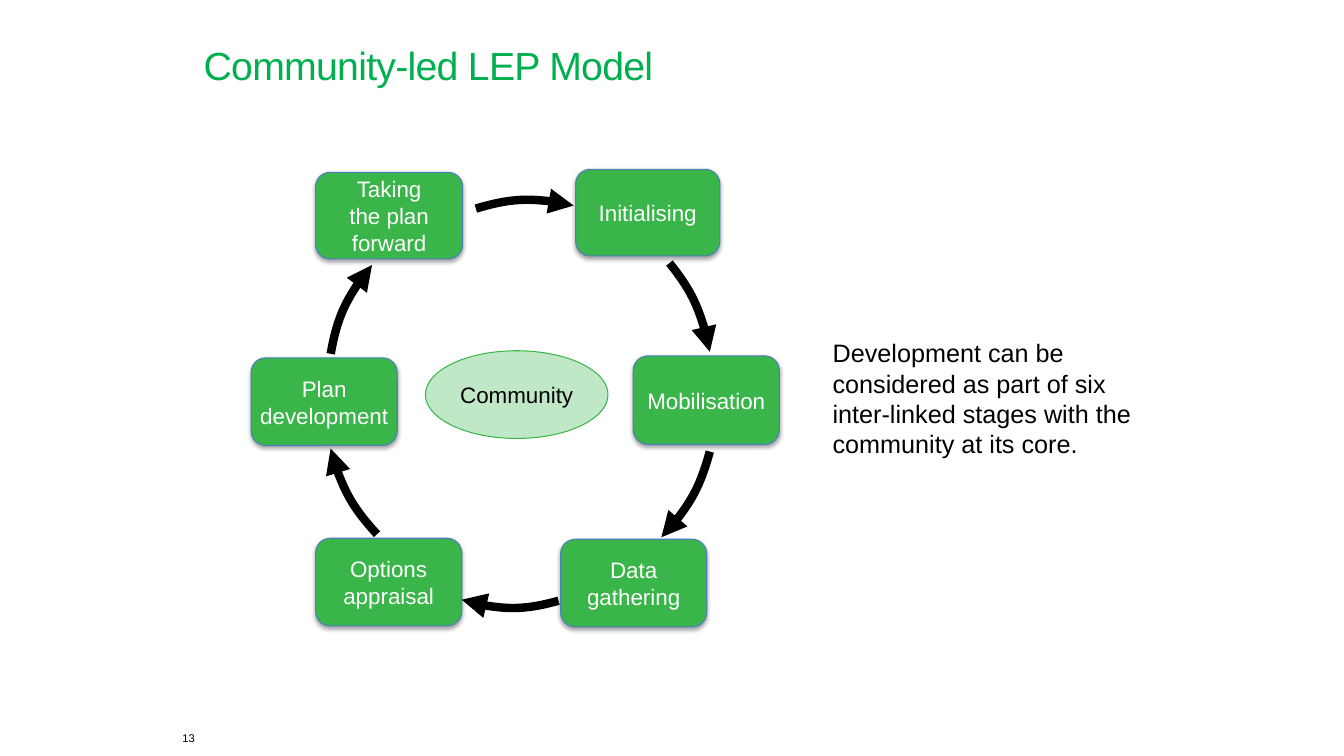
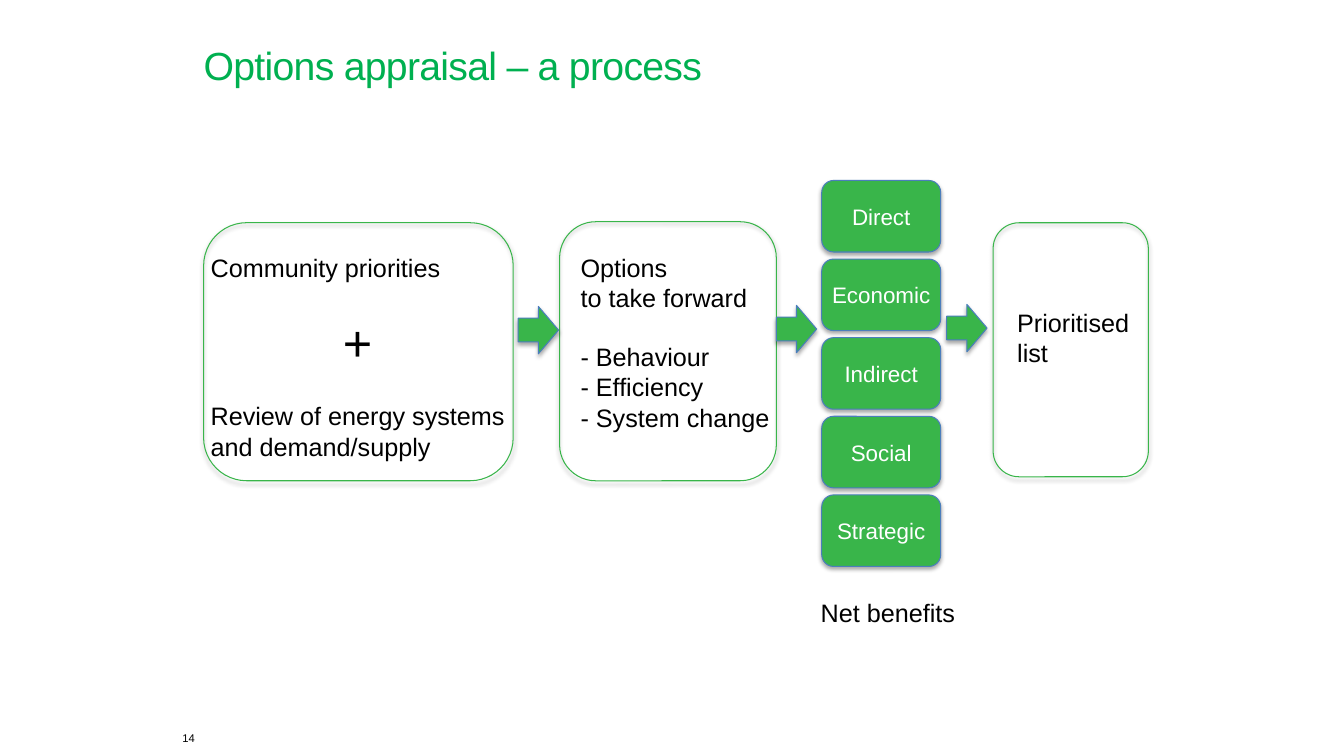
"""Build two slides on community-led local energy planning."""
from dataclasses import dataclass

from lxml import etree
from pptx import Presentation
from pptx.dml.color import RGBColor
from pptx.enum.shapes import MSO_SHAPE
from pptx.enum.text import MSO_ANCHOR, MSO_AUTO_SIZE, PP_ALIGN
from pptx.oxml.ns import qn
from pptx.shapes.autoshape import Shape
from pptx.slide import Slide
from pptx.text.text import TextFrame
from pptx.util import Inches, Pt

ROUNDED = MSO_SHAPE.ROUNDED_RECTANGLE
RIGHT_ARROW = MSO_SHAPE.RIGHT_ARROW
OVAL = MSO_SHAPE.OVAL
LEFT, CENTER = PP_ALIGN.LEFT, PP_ALIGN.CENTER
TOP, MIDDLE = MSO_ANCHOR.TOP, MSO_ANCHOR.MIDDLE
NO_AUTOFIT = MSO_AUTO_SIZE.NONE

FONT = "Arial"
GREEN, TITLE_GREEN, BLUE = "39B54A", "00B050", "4B7EBC"
BLACK, WHITE = "000000", "FFFFFF"
BLANK_LINE = 20.7
TITLE_ONLY_LAYOUT = 5


@dataclass(frozen=True)
class Box:
    """Position and size in inches."""
    left: float
    top: float
    width: float
    height: float


@dataclass(frozen=True)
class Line:
    """One paragraph with its size and space before in points."""
    text: str
    size: float = 18
    color: str = BLACK
    align: PP_ALIGN = LEFT
    before: float = 0


@dataclass(frozen=True)
class Stage:
    """A green box with one or more paragraphs."""
    box: Box
    texts: tuple[str, ...]
    side_inset: float = 0.04


@dataclass(frozen=True)
class Note:
    """Free text on a slide."""
    box: Box
    lines: tuple[Line, ...]
    wrap: bool = False


Point = tuple[float, float]

STAGES = (
    Stage(Box(6.28, 3.53, 1.45, 0.88), ("Mobilisation",)),
    Stage(Box(5.56, 5.35, 1.45, 0.87), ("Data gathering",)),
    Stage(Box(3.13, 5.34, 1.45, 0.87), ("Options appraisal",)),
    Stage(Box(2.49, 3.55, 1.45, 0.87), ("Plan development",), 0.01),
    Stage(Box(3.13, 1.71, 1.46, 0.86), ("Taking", "the plan forward")),
    Stage(Box(5.71, 1.68, 1.43, 0.86), ("Initialising",)),
)

CYCLE_ARROWS: tuple[tuple[Point, ...], ...] = (
    ((5.54, 5.96), (5.22, 6.05), (4.88, 6.05), (4.58, 5.95)),
    ((3.28, 3.51), (3.34, 3.17), (3.48, 2.87), (3.69, 2.63)),
    ((6.64, 2.61), (6.85, 2.87), (6.99, 3.18), (7.04, 3.49)),
    ((7.04, 4.48), (6.95, 4.81), (6.79, 5.1), (6.56, 5.33)),
    ((3.74, 5.3), (3.51, 5.05), (3.35, 4.76), (3.28, 4.45)),
    ((4.72, 2.07), (5.05, 1.97), (5.38, 1.96), (5.69, 2.04)),
)

SUMMARY = Note(
    Box(8.16, 3.3, 3.27, 1.31),
    (Line("Development can be considered as part of six inter-linked stages "
          "with the community at its core."),),
    wrap=True,
)

BENEFITS = ("Direct", "Economic", "Indirect", "Social", "Strategic")
BENEFIT_TOP, BENEFIT_PITCH = 1.79, 0.78

FRAMES = (
    Box(2.02, 2.21, 3.07, 2.56),
    Box(5.55, 2.2, 2.15, 2.57),
    Box(9.85, 2.21, 1.54, 2.52),
)
STEP_ARROWS = (
    Box(5.14, 3.04, 0.4, 0.47),
    Box(7.7, 3.03, 0.4, 0.47),
    Box(9.39, 3.02, 0.4, 0.47),
)
PROCESS_NOTES = (
    Note(Box(1.99, 2.45, 3.15, 2.22), (
        Line("Community priorities"),
        Line("+", size=36, align=CENTER, before=BLANK_LINE),
        Line("Review of energy systems", before=BLANK_LINE),
        Line("and demand/supply"),
    )),
    Note(Box(5.66, 2.45, 2.1, 1.92), (
        Line("Options"),
        Line("to take forward"),
        Line("- Behaviour", before=BLANK_LINE),
        Line("- Efficiency"),
        Line("- System change"),
    )),
    Note(Box(9.99, 3, 1.32, 0.71), (Line("Prioritised"), Line("list"))),
    Note(Box(8.04, 5.88, 1.55, 0.4), (Line("Net benefits"),)),
)


def rgb(color: str) -> RGBColor:
    """Turn a hex string into a colour."""
    return RGBColor.from_string(color)


def bounds(box: Box) -> tuple[Inches, Inches, Inches, Inches]:
    """Give a box as lengths."""
    return (Inches(box.left), Inches(box.top),
            Inches(box.width), Inches(box.height))


def write(frame: TextFrame, lines: tuple[Line, ...]) -> None:
    """Fill a text frame with formatted paragraphs."""
    for index, line in enumerate(lines):
        paragraph = frame.add_paragraph() if index else frame.paragraphs[0]
        paragraph.alignment = line.align
        if line.before:
            paragraph.space_before = Pt(line.before)
        run = paragraph.add_run()
        run.text = line.text
        run.font.name = FONT
        run.font.size = Pt(line.size)
        run.font.color.rgb = rgb(line.color)


def add_note(slide: Slide, note: Note) -> None:
    """Add a text box."""
    frame = slide.shapes.add_textbox(*bounds(note.box)).text_frame
    frame.word_wrap = note.wrap
    write(frame, note.lines)


def add_shadow(shape: Shape) -> None:
    """Give a shape a soft shadow below it."""
    effects = shape.element.spPr.find(qn("a:effectLst"))
    shadow = etree.SubElement(
        effects, qn("a:outerShdw"), blurRad=str(Pt(3.1)), dist=str(Pt(1.8)),
        dir="5400000", rotWithShape="0")
    color = etree.SubElement(shadow, qn("a:srgbClr"), val=BLACK)
    etree.SubElement(color, qn("a:alpha"), val="35000")


def add_preset(slide: Slide, kind: MSO_SHAPE, box: Box, fill: str | None,
               outline: str, width: float = 0.75,
               shadow: bool = True) -> Shape:
    """Add a preset shape with its fill, outline and shadow."""
    shape = slide.shapes.add_shape(kind, *bounds(box))
    if fill:
        shape.fill.solid()
        shape.fill.fore_color.rgb = rgb(fill)
    else:
        shape.fill.background()
    shape.line.color.rgb = rgb(outline)
    shape.line.width = Pt(width)
    shape.shadow.inherit = False
    if shadow:
        add_shadow(shape)
    return shape


def label(shape: Shape, texts: tuple[str, ...], color: str,
          side: float, edge: float) -> None:
    """Centre text inside a shape."""
    frame = shape.text_frame
    frame.word_wrap = True
    frame.vertical_anchor = MIDDLE
    frame.margin_left = frame.margin_right = Inches(side)
    frame.margin_top = frame.margin_bottom = Inches(edge)
    write(frame, tuple(Line(text, 16, color, CENTER) for text in texts))


def add_stage(slide: Slide, stage: Stage) -> None:
    """Add a labelled green box."""
    shape = add_preset(slide, ROUNDED, stage.box, GREEN, BLUE)
    label(shape, stage.texts, WHITE, stage.side_inset, 0.05)


def add_curved_arrow(slide: Slide, points: tuple[Point, ...]) -> None:
    """Add a thick arrow along a cubic curve."""
    start, *others = [(Inches(x), Inches(y)) for x, y in points]
    builder = slide.shapes.build_freeform(*start)
    builder.add_line_segments(others, close=False)
    shape = builder.convert_to_shape()
    outline = next(shape.element.iter(qn("a:path")))
    curve = etree.SubElement(outline, qn("a:cubicBezTo"))
    for segment in outline.findall(qn("a:lnTo")):
        curve.append(segment[0])
        outline.remove(segment)
    shape.fill.background()
    shape.line.color.rgb = rgb(BLACK)
    shape.line.width = Pt(6)
    shape.shadow.inherit = False
    etree.SubElement(shape.element.spPr.find(qn("a:ln")), qn("a:tailEnd"),
                     type="triangle")


def add_community(slide: Slide) -> None:
    """Add the translucent ellipse at the core of the cycle."""
    ellipse = add_preset(slide, OVAL, Box(4.22, 3.48, 1.81, 0.87),
                         GREEN, GREEN, width=0, shadow=False)
    color = ellipse.element.spPr.find(qn("a:solidFill"))[0]
    etree.SubElement(color, qn("a:alpha"), val="31000")
    label(ellipse, ("Community",), BLACK, 0, 0)


def add_slide(presentation: Presentation, title: str, number: int) -> Slide:
    """Add a slide with its title and number."""
    layout = presentation.slide_layouts[TITLE_ONLY_LAYOUT]
    slide = presentation.slides.add_slide(layout)
    heading = slide.shapes.title
    heading.left, heading.top, heading.width, heading.height = bounds(
        Box(1.92, 0.36, 9, 0.85))
    frame = heading.text_frame
    frame.auto_size = NO_AUTOFIT
    frame.vertical_anchor = TOP
    write(frame, (Line(title, 28, TITLE_GREEN),))
    frame.paragraphs[0].runs[0].font._element.set("spc", "-50")
    add_note(slide, Note(Box(1.71, 7.21, 0.5, 0.27),
                         (Line(str(number), 8),), wrap=True))
    return slide


def build_cycle(presentation: Presentation) -> None:
    """Build the six-stage cycle slide."""
    slide = add_slide(presentation, "Community-led LEP Model", 13)
    for stage in STAGES:
        add_stage(slide, stage)
    for points in CYCLE_ARROWS:
        add_curved_arrow(slide, points)
    add_community(slide)
    add_note(slide, SUMMARY)


def build_process(presentation: Presentation) -> None:
    """Build the options appraisal slide."""
    slide = add_slide(presentation, "Options appraisal – a process", 14)
    for index, benefit in enumerate(BENEFITS):
        top = BENEFIT_TOP + index * BENEFIT_PITCH
        add_stage(slide, Stage(Box(8.15, top, 1.18, 0.71), (benefit,)))
    for frame in FRAMES:
        add_preset(slide, ROUNDED, frame, None, GREEN)
    for arrow in STEP_ARROWS:
        add_preset(slide, RIGHT_ARROW, arrow, GREEN, BLUE)
    for note in PROCESS_NOTES:
        add_note(slide, note)


def main() -> None:
    """Build and save the presentation."""
    presentation = Presentation()
    presentation.slide_width = Inches(13.33)
    presentation.slide_height = Inches(7.5)
    build_cycle(presentation)
    build_process(presentation)
    presentation.save("out.pptx")


if __name__ == "__main__":
    main()
